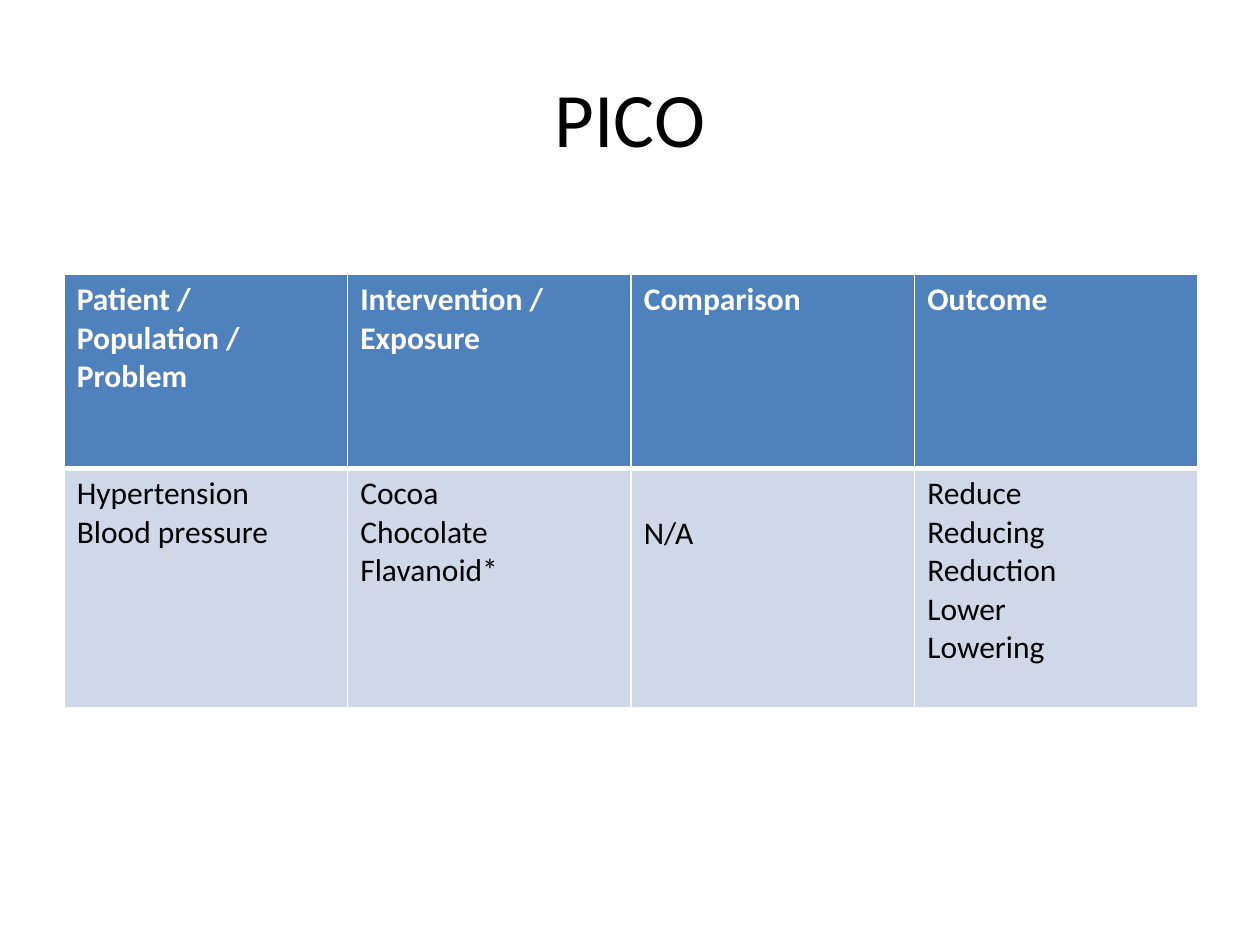
from lxml.etree import SubElement
from pptx import Presentation
from pptx.dml.color import RGBColor
from pptx.enum.text import MSO_ANCHOR, PP_ALIGN
from pptx.oxml.ns import qn
from pptx.util import Inches, Pt

FONT = "Calibri"
WHITE, BLACK, BLUE, PALE = "FFFFFF", "000000", "4F81BD", "D0D8E8"
HEADINGS = ["Patient / Population / Problem", "Intervention / Exposure", "Comparison", "Outcome"]
TERMS = [
    ["Hypertension", "Blood pressure"],
    ["Cocoa", "Chocolate", "Flavanoid*"],
    ["N/A"],
    ["Reduce", "Reducing", "Reduction", "Lower", "Lowering"],
]
ROW_HEIGHTS = [1.54, 1.9]


def rgb(value):
    return RGBColor.from_string(value)


def add_text(tf, lines, size, color, bold=False, align=PP_ALIGN.LEFT):
    tf.word_wrap = True
    for i, line in enumerate(lines):
        p = tf.add_paragraph() if i else tf.paragraphs[0]
        p.alignment = align
        r = p.add_run()
        r.text = line
        r.font.name = FONT
        r.font.size = Pt(size)
        r.font.bold = bold
        r.font.color.rgb = rgb(color)


def set_borders(cell, bottom):
    tc_pr = cell._tc.get_or_add_tcPr()
    widths = {"a:lnL": 1, "a:lnR": 1, "a:lnT": 1, "a:lnB": bottom}
    for i, (tag, width) in enumerate(widths.items()):
        ln = SubElement(tc_pr, qn(tag), w=str(Pt(width)))
        fill = SubElement(ln, qn("a:solidFill"))
        SubElement(fill, qn("a:srgbClr"), val=WHITE)
        tc_pr.insert(i, ln)


def add_title(s, left, top, width, height):
    sp = s.shapes.add_textbox(Inches(left), Inches(top), Inches(width), Inches(height))
    tf = sp.text_frame
    tf.vertical_anchor = MSO_ANCHOR.MIDDLE
    add_text(tf, ["PICO"], 44, BLACK, align=PP_ALIGN.CENTER)


def add_pico_table(s, left, top, width, height):
    frame = s.shapes.add_table(2, len(HEADINGS), Inches(left), Inches(top), Inches(width), Inches(height))
    table = frame.table
    for row, row_height in zip(table.rows, ROW_HEIGHTS):
        row.height = Inches(row_height)
    for col, (heading, terms) in enumerate(zip(HEADINGS, TERMS)):
        table.columns[col].width = Inches(width / len(HEADINGS))
        styles = [([heading], BLUE, WHITE, True, 3), (terms, PALE, BLACK, False, 1)]
        for row, (lines, fill, color, bold, bottom) in enumerate(styles):
            cell = table.cell(row, col)
            cell.fill.solid()
            cell.fill.fore_color.rgb = rgb(fill)
            set_borders(cell, bottom)
            add_text(cell.text_frame, lines, 18, color, bold)
    table.cell(1, HEADINGS.index("Comparison")).margin_top = Inches(0.36)


def main():
    prs = Presentation()
    prs.slide_width, prs.slide_height = Inches(10), Inches(7.5)
    s = prs.slides.add_slide(prs.slide_layouts[6])
    add_title(s, 0.5, 0.3, 9, 1.25)
    add_pico_table(s, 0.51, 2.18, 9, sum(ROW_HEIGHTS))
    prs.save("out.pptx")


if __name__ == "__main__":
    main()
